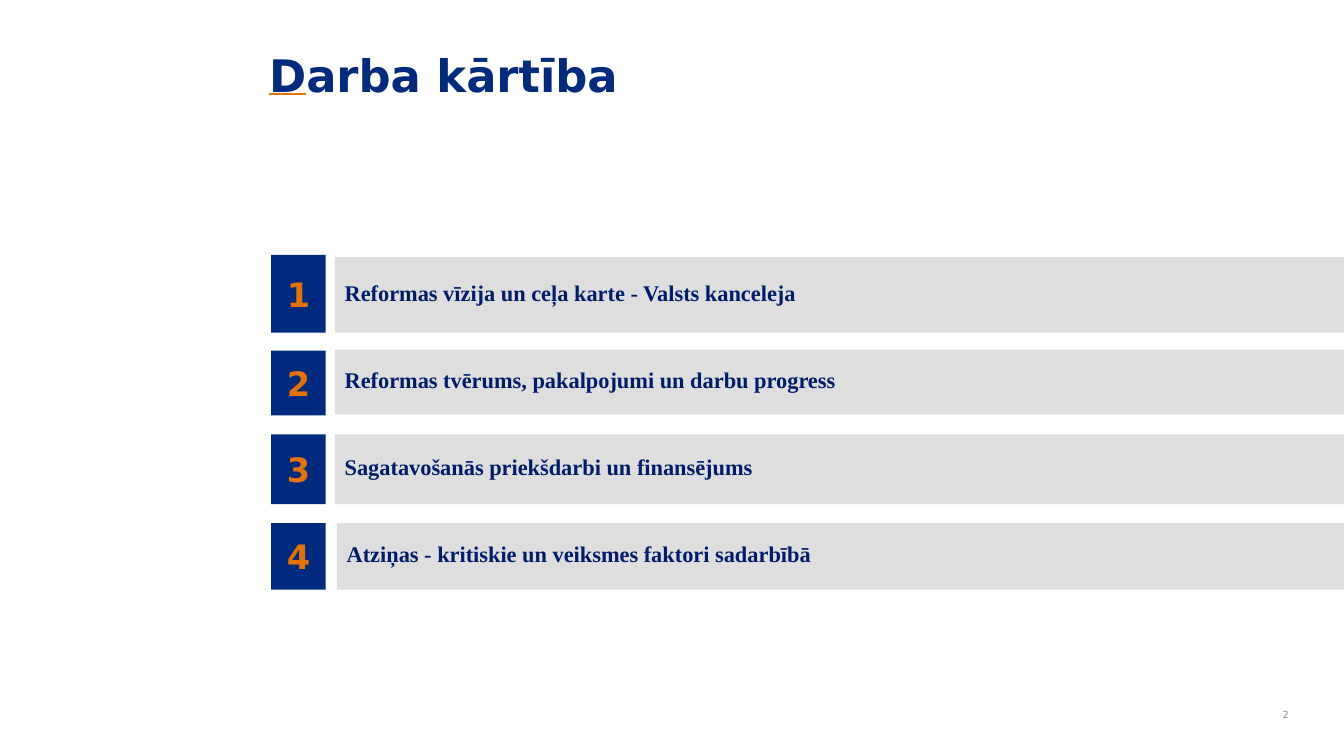
from dataclasses import dataclass

from lxml import etree
from pptx import Presentation
from pptx.dml.color import RGBColor
from pptx.enum.shapes import MSO_SHAPE as Shape
from pptx.enum.text import MSO_ANCHOR as Anchor, PP_ALIGN as Align
from pptx.oxml.ns import qn
from pptx.util import Inches, Pt

SLIDE_W, SLIDE_H = 13.33, 7.5
NAVY, ORANGE, GREY, INK, MUTED = "002A7E", "E57100", "DEDEDE", "001B6C", "898989"
SANS, SERIF = "DejaVu Sans", "Times New Roman"
NUMBER_LEFT, NUMBER_W = 2.69, 0.54


@dataclass
class AgendaItem:
    text: str
    number_top: float
    number_h: float
    bar_top: float
    bar_h: float
    bar_left: float = 3.32


ITEMS = [
    AgendaItem("Reformas vīzija un ceļa karte - Valsts kanceleja", 2.53, 0.77, 2.55, 0.75),
    AgendaItem("Reformas tvērums, pakalpojumi un darbu progress", 3.48, 0.64, 3.47, 0.64),
    AgendaItem("Sagatavošanās priekšdarbi un finansējums", 4.31, 0.69, 4.31, 0.69),
    AgendaItem("Atziņas - kritiskie un veiksmes faktori sadarbībā", 5.19, 0.66, 5.19, 0.66, 3.34),
]


def color(value: str) -> RGBColor:
    return RGBColor.from_string(value)


def write(sp, text: str, *, size: float, fill: str, font: str = SANS, bold: bool = False,
          align=Align.LEFT, anchor=Anchor.MIDDLE, insets=(0.1, 0.05, 0.1, 0.05),
          after: float = 0):
    """Add a run to the first paragraph of a shape and format it."""
    tf = sp.text_frame
    tf.word_wrap = True
    tf.vertical_anchor = anchor
    tf.margin_left, tf.margin_top, tf.margin_right, tf.margin_bottom = map(Inches, insets)
    p = tf.paragraphs[0]
    p.alignment = align
    p.space_after = Pt(after)
    r = p.add_run()
    r.text = text
    r.font.name, r.font.size, r.font.bold = font, Pt(size), bold
    r.font.color.rgb = color(fill)
    return r


def underline(r, line: str) -> None:
    """Underline a run in a colour of its own."""
    r.font.underline = True
    u_fill = etree.Element(qn("a:uFill"))
    solid = etree.SubElement(u_fill, qn("a:solidFill"))
    etree.SubElement(solid, qn("a:srgbClr"), val=line)
    r.font.fill  # the text colour precedes the underline colour
    r._r.rPr.find(qn("a:latin")).addprevious(u_fill)


def add_text_box(slide, left: float, top: float, width: float, height: float):
    return slide.shapes.add_textbox(*map(Inches, (left, top, width, height)))


def add_block(slide, left: float, top: float, width: float, height: float, fill: str):
    sp = slide.shapes.add_shape(Shape.ROUNDED_RECTANGLE,
                                *map(Inches, (left, top, width, height)))
    sp.adjustments[0] = 0
    sp.shadow.inherit = False
    sp.fill.solid()
    sp.fill.fore_color.rgb = color(fill)
    sp.line.fill.background()
    return sp


def add_item(slide, number: int, item: AgendaItem) -> None:
    sp = add_block(slide, NUMBER_LEFT, item.number_top, NUMBER_W, item.number_h, NAVY)
    write(sp, str(number), size=24, fill=ORANGE, bold=True, align=Align.CENTER,
          insets=(0, 0, 0, 0), after=6)
    sp = add_block(slide, item.bar_left, item.bar_top, SLIDE_W - item.bar_left,
                   item.bar_h, GREY)
    write(sp, item.text, size=16, fill=INK, font=SERIF, bold=True, insets=(0.1, 0, 0, 0.05))


def main() -> None:
    prs = Presentation()
    prs.slide_width, prs.slide_height = Inches(SLIDE_W), Inches(SLIDE_H)
    slide = prs.slides.add_slide(prs.slide_layouts[6])

    # Title with an underlined initial
    title = add_text_box(slide, 2.57, 0.42, 7.55, 1.13)
    title_format = dict(size=32, fill=NAVY, bold=True, anchor=Anchor.TOP)
    underline(write(title, "D", **title_format), ORANGE)
    write(title, "arba kārtība", **title_format)

    # Agenda
    for number, item in enumerate(ITEMS, start=1):
        add_item(slide, number, item)

    # Slide number
    write(add_text_box(slide, 12.44, 6.92, 0.44, 0.33), "2", size=7, fill=MUTED,
          align=Align.RIGHT)

    prs.save("out.pptx")


if __name__ == "__main__":
    main()
